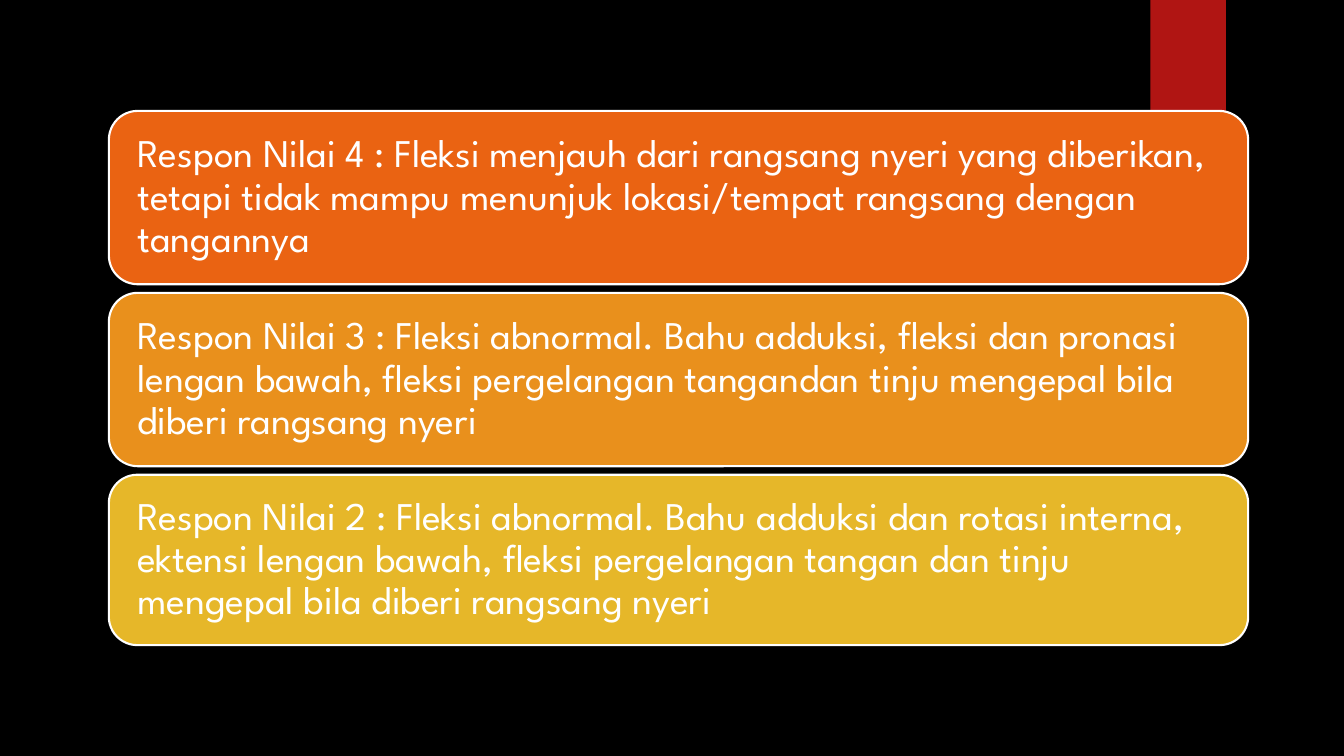
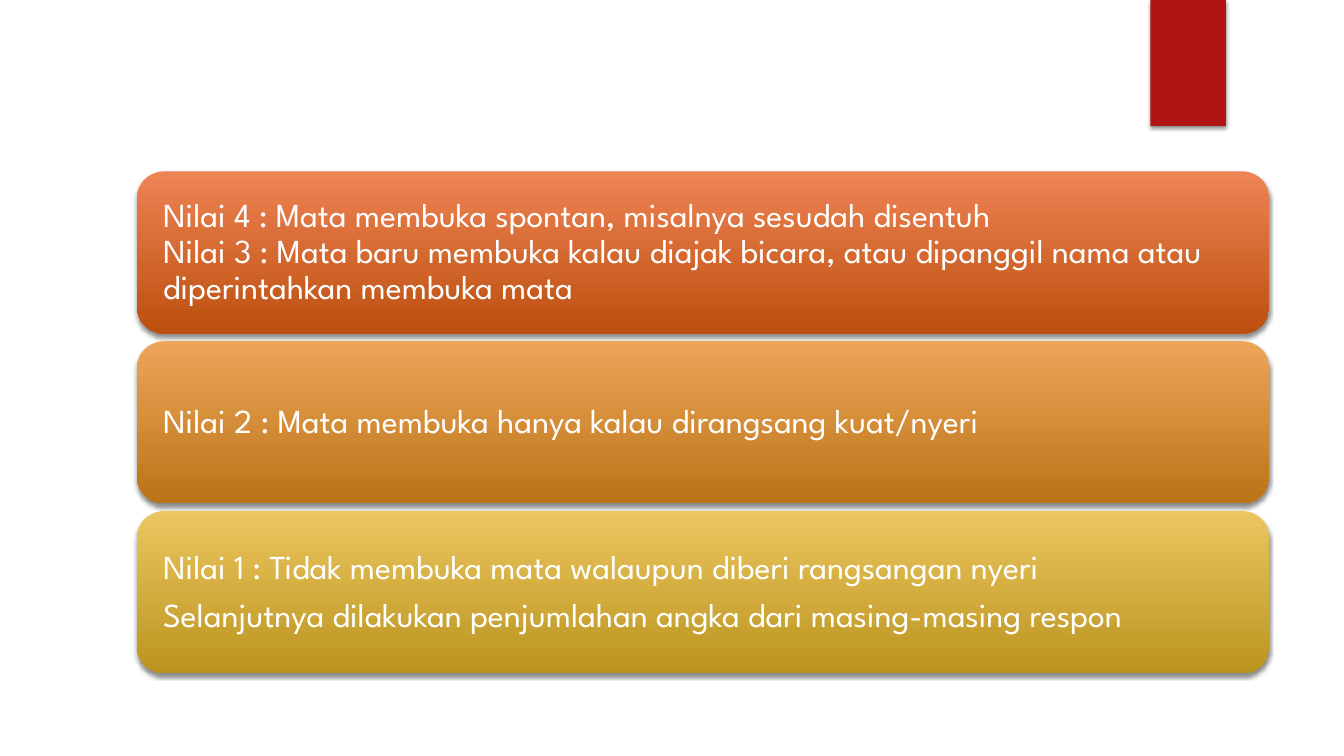
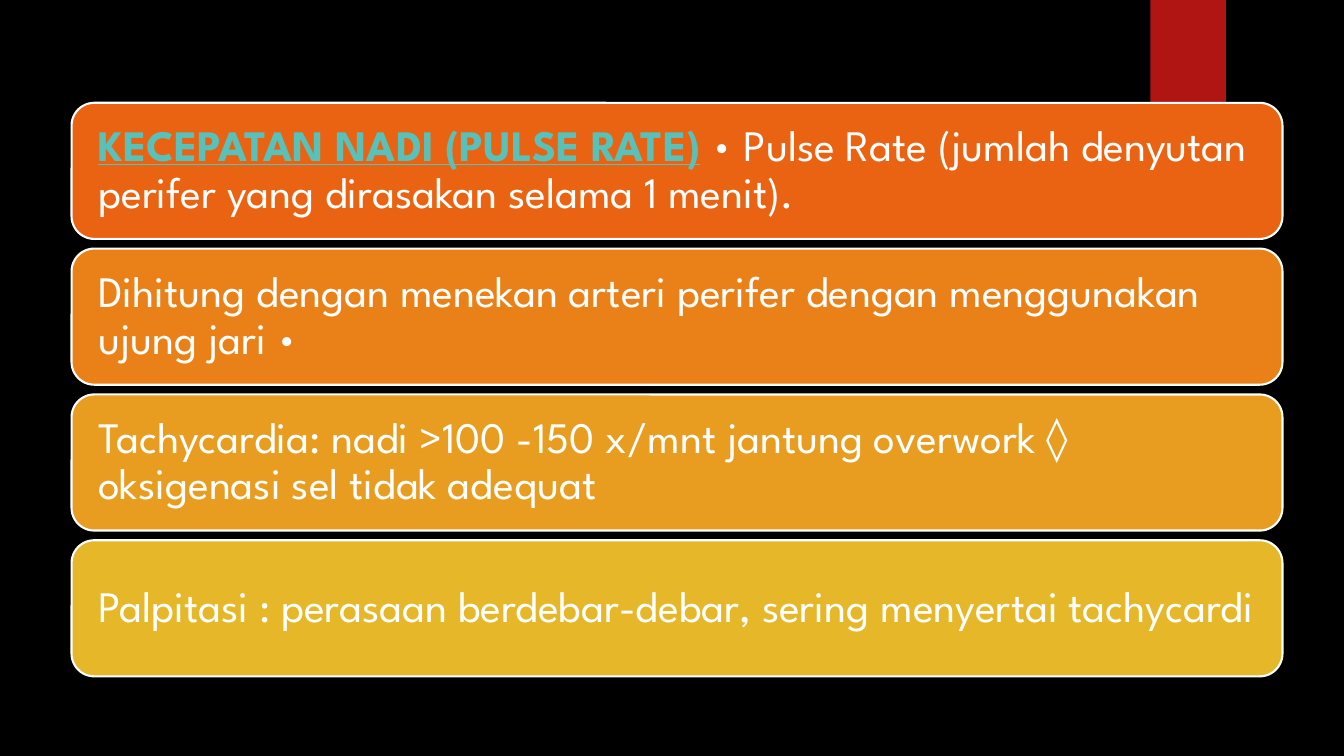
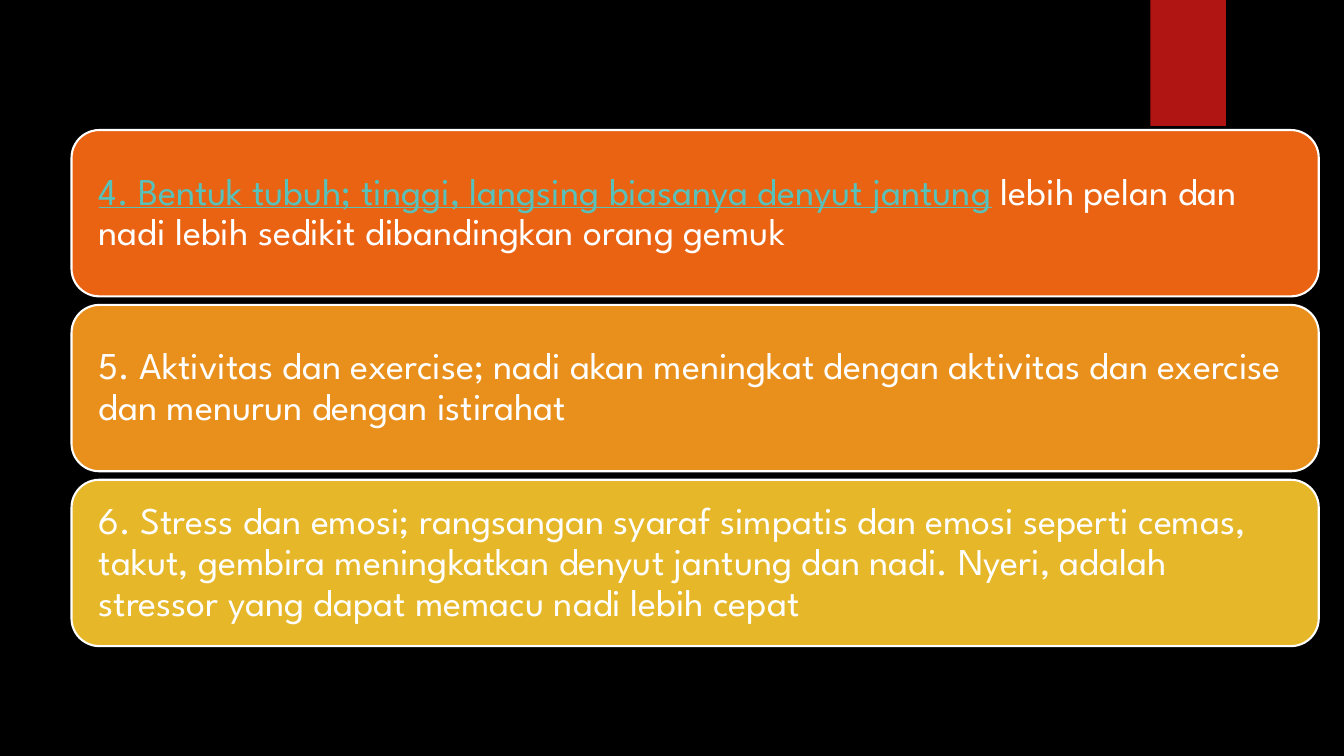
"""Build four slides of stacked cards on consciousness scores and pulse rate."""
import pptx
import pptx.dml.color
import pptx.enum.dml
import pptx.enum.shapes
import pptx.enum.text
import pptx.oxml
import pptx.oxml.ns
import pptx.util

RGBColor = pptx.dml.color.RGBColor
Inches = pptx.util.Inches
Pt = pptx.util.Pt
Shapes = pptx.enum.shapes.MSO_SHAPE

FONT = "League Spartan"
BLACK = RGBColor(0x00, 0x00, 0x00)
WHITE = RGBColor(0xFF, 0xFF, 0xFF)
RED = RGBColor(0xB0, 0x15, 0x13)
TEAL = RGBColor(0x58, 0xC1, 0xBA)
ORANGE = RGBColor(0xEA, 0x63, 0x12)
TANGERINE = RGBColor(0xEA, 0x81, 0x18)
AMBER = RGBColor(0xE9, 0x90, 0x1C)
HONEY = RGBColor(0xE8, 0x9D, 0x21)
GOLD = RGBColor(0xE6, 0xB7, 0x29)
ORANGE_FADE = (RGBColor(0xEE, 0x84, 0x55), RGBColor(0xBC, 0x4F, 0x0E))
AMBER_FADE = (RGBColor(0xED, 0xA6, 0x59), RGBColor(0xBB, 0x73, 0x17))
GOLD_FADE = (RGBColor(0xEB, 0xC6, 0x5F), RGBColor(0xBB, 0x94, 0x1F))

ACCENT = {"color": TEAL, "underline": True}
BOLD_ACCENT = {**ACCENT, "bold": True}

SLIDES = [
    {
        "background": BLACK, "size": 28, "inset": 0.2,
        "left": 1.08, "width": 11.3, "top": 1.1, "bottom": 6.4,
        "heights": (1.72, 1.72, 1.69),
        "fills": (ORANGE, AMBER, GOLD),
        "cards": [
            [[("Respon Nilai 4 : Fleksi menjauh dari rangsang nyeri yang diberikan, "
               "tetapi tidak mampu menunjuk lokasi/tempat rangsang dengan tangannya", {})]],
            [[("Respon Nilai 3 : Fleksi abnormal. Bahu adduksi, fleksi dan pronasi "
               "lengan bawah, fleksi pergelangan tangandan tinju mengepal bila "
               "diberi rangsang nyeri", {})]],
            [[("Respon Nilai 2 : Fleksi abnormal. Bahu adduksi dan rotasi interna, "
               "ektensi lengan bawah, fleksi pergelangan tangan dan tinju "
               "mengepal bila diberi rangsang nyeri", {})]],
        ],
    },
    {
        "background": WHITE, "size": 24, "inset": 0.18,
        "left": 1.36, "width": 11.23, "top": 1.7, "bottom": 6.68,
        "heights": (1.61,) * 3,
        "fills": (ORANGE_FADE, AMBER_FADE, GOLD_FADE),
        "cards": [
            [[("Nilai 4 : Mata membuka spontan, misalnya sesudah disentuh\n"
               "Nilai 3 : Mata baru membuka kalau diajak bicara, atau dipanggil "
               "nama atau diperintahkan membuka mata", {})]],
            [[("Nilai 2 : Mata membuka hanya kalau dirangsang kuat/nyeri", {})]],
            [[("Nilai 1 : Tidak membuka mata walaupun diberi rangsangan nyeri", {})],
             [("Selanjutnya dilakukan penjumlahan angka dari masing-masing respon", {})]],
        ],
    },
    {
        "background": BLACK, "size": 31, "inset": 0.2,
        "left": 0.71, "width": 12.01, "top": 1.02, "bottom": 6.71,
        "heights": (1.35,) * 4,
        "fills": (ORANGE, TANGERINE, HONEY, GOLD),
        "cards": [
            [[("KECEPATAN NADI (PULSE RATE)", BOLD_ACCENT),
              (" • Pulse Rate (jumlah denyutan perifer yang dirasakan selama 1 menit).", {})]],
            [[("Dihitung dengan menekan arteri perifer dengan menggunakan ujung jari •", {})]],
            [[("Tachycardia: nadi >100 -150 x/mnt jantung overwork ◊ oksigenasi "
               "sel tidak adequat", {})]],
            [[("Palpitasi : perasaan berdebar-debar, sering menyertai tachycardi", {})]],
        ],
    },
    {
        "background": BLACK, "size": 27, "inset": 0.19,
        "left": 0.71, "width": 12.37, "top": 1.29, "bottom": 6.41,
        "heights": (1.65,) * 3,
        "fills": (ORANGE, AMBER, GOLD),
        "cards": [
            [[("4. Bentuk tubuh; tinggi, langsing biasanya denyut jantung", ACCENT),
              (" lebih pelan dan nadi lebih sedikit dibandingkan orang gemuk", {})]],
            [[("5. Aktivitas dan exercise; nadi akan meningkat dengan aktivitas dan "
               "exercise dan menurun dengan istirahat", {})]],
            [[("6. Stress dan emosi; rangsangan syaraf simpatis dan emosi seperti cemas, "
               "takut, gembira meningkatkan denyut jantung dan nadi. Nyeri, adalah "
               "stressor yang dapat memacu nadi lebih cepat", {})]],
        ],
    },
]


def add_text(paragraph, text, size, color=WHITE, bold=False, underline=False):
    for index, line in enumerate(text.split("\n")):
        if index:
            paragraph.add_line_break()
        run = paragraph.add_run()
        run.text = line
        run.font.name = FONT
        run.font.size = Pt(size)
        run.font.color.rgb = color
        run.font.bold = bold
        run.font.underline = underline


def add_shadow(shape):
    effects = shape.element.spPr.find(pptx.oxml.ns.qn("a:effectLst"))
    effects.append(pptx.oxml.parse_xml(
        f'<a:outerShdw {pptx.oxml.ns.nsdecls("a")} blurRad="{Pt(3)}" dist="{Pt(2)}" '
        'dir="5400000" algn="ctr" rotWithShape="0"><a:srgbClr val="000000">'
        '<a:alpha val="45000"/></a:srgbClr></a:outerShdw>'))


def add_box(slide, kind, left, top, width, height, fill):
    shape = slide.shapes.add_shape(
        kind, Inches(left), Inches(top), Inches(width), Inches(height))
    shape.shadow.inherit = False
    shape.line.fill.background()
    if isinstance(fill, RGBColor):
        shape.fill.solid()
        shape.fill.fore_color.rgb = fill
    else:
        shape.fill.gradient()
        shape.fill.gradient_angle = 270
        for position, (stop, color) in enumerate(zip(shape.fill.gradient_stops, fill)):
            stop.position = position
            stop.color.rgb = color
    return shape


def add_card(slide, paragraphs, content, top, height, fill):
    card = add_box(slide, Shapes.ROUNDED_RECTANGLE, content["left"], top,
                   content["width"], height, fill)
    if isinstance(fill, RGBColor):
        card.line.color.rgb = WHITE
        card.line.width = Pt(1.5)
    else:
        add_shadow(card)
    frame = card.text_frame
    frame.word_wrap = True
    frame.vertical_anchor = pptx.enum.text.MSO_ANCHOR.MIDDLE
    frame.margin_left = frame.margin_right = Inches(content["inset"])
    frame.margin_top = frame.margin_bottom = Inches(content["inset"])
    for index, runs in enumerate(paragraphs):
        paragraph = frame.add_paragraph() if index else frame.paragraphs[0]
        paragraph.alignment = pptx.enum.text.PP_ALIGN.LEFT
        paragraph.line_spacing = 0.9
        paragraph.space_after = Pt(0.35 * content["size"])
        for text, style in runs:
            add_text(paragraph, text, content["size"], **style)


def add_slide(presentation, content):
    slide = presentation.slides.add_slide(presentation.slide_layouts[6])
    slide.background.fill.solid()
    slide.background.fill.fore_color.rgb = content["background"]
    add_shadow(add_box(slide, Shapes.RECTANGLE, 11.41, 0, 0.75, 1.25, RED))
    heights = content["heights"]
    gap = (content["bottom"] - content["top"] - sum(heights)) / (len(heights) - 1)
    top = content["top"]
    for paragraphs, height, fill in zip(content["cards"], heights, content["fills"]):
        add_card(slide, paragraphs, content, top, height, fill)
        top += height + gap


def main():
    presentation = pptx.Presentation()
    presentation.slide_width = Inches(13.33)
    presentation.slide_height = Inches(7.5)
    for content in SLIDES:
        add_slide(presentation, content)
    presentation.save("out.pptx")


if __name__ == "__main__":
    main()
